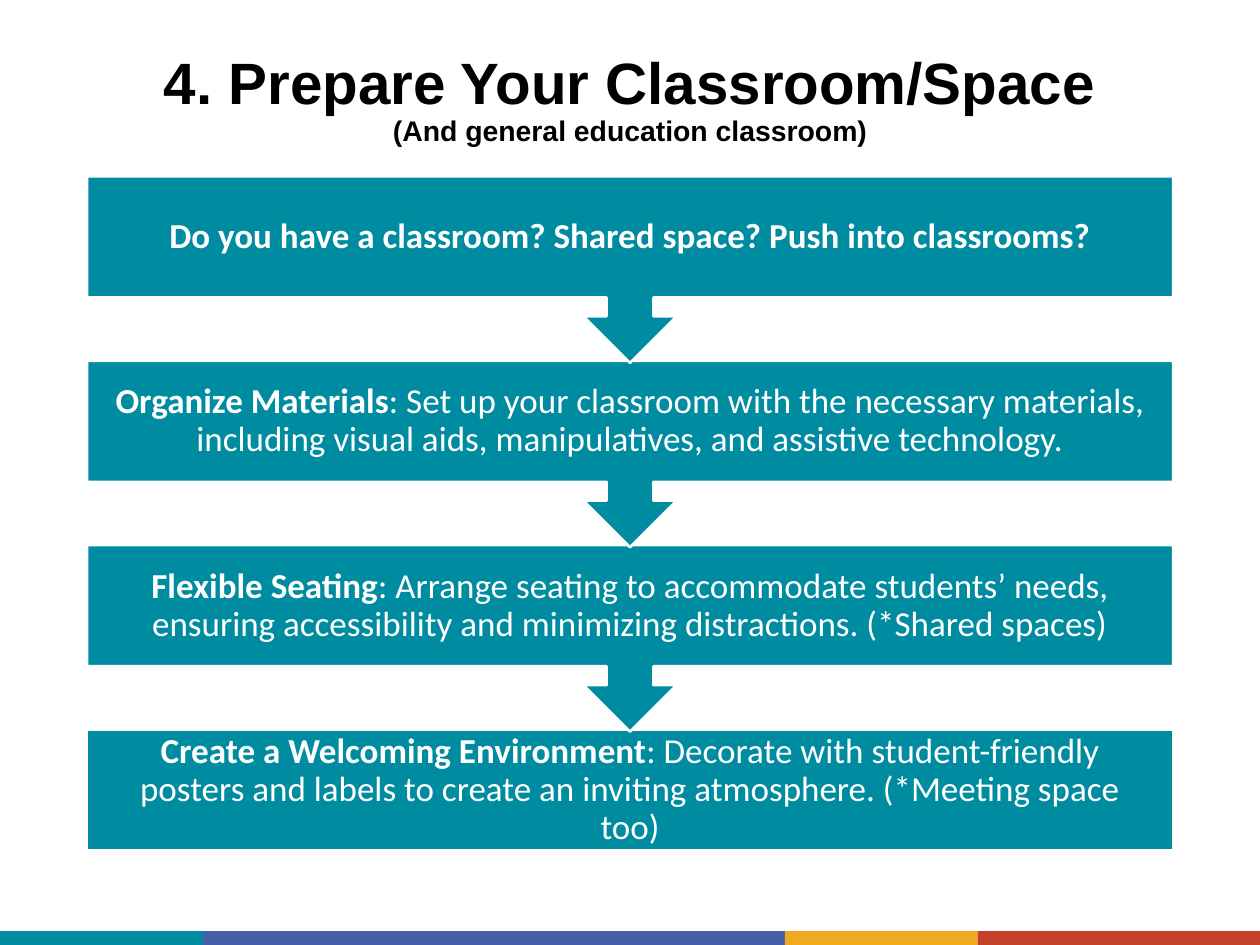
from dataclasses import dataclass

from pptx import Presentation
from pptx.dml.color import RGBColor
from pptx.enum.shapes import MSO_SHAPE as Shape
from pptx.enum.text import MSO_ANCHOR as Anchor, PP_ALIGN as Align
from pptx.util import Inches, Pt


@dataclass(frozen=True)
class Theme:
    """Colours, fonts and type sizes of the slide."""
    teal: RGBColor = RGBColor.from_string("008CA0")
    blue: RGBColor = RGBColor.from_string("455FA9")
    amber: RGBColor = RGBColor.from_string("EFAA1F")
    red: RGBColor = RGBColor.from_string("C63F28")
    white: RGBColor = RGBColor.from_string("FFFFFF")
    black: RGBColor = RGBColor.from_string("000000")
    title_font: str = "Arial"
    body_font: str = "Calibri"
    title_size: Pt = Pt(33.3)
    subtitle_size: Pt = Pt(16.2)
    body_size: Pt = Pt(20)
    outline: Pt = Pt(1.5)


THEME = Theme()

STEPS = [
    ("Do you have a classroom? Shared space? Push into classrooms?", ""),
    ("Organize Materials", ": Set up your classroom with the necessary materials, "
     "including visual aids, manipulatives, and assistive technology."),
    ("Flexible Seating", ": Arrange seating to accommodate students’ needs, ensuring "
     "accessibility and minimizing distractions. (*Shared spaces)"),
    ("Create a Welcoming Environment", ": Decorate with student-friendly posters and "
     "labels to create an inviting atmosphere. (*Meeting space too)"),
]


def add_block(slide, kind, left, top, width, height, color):
    """Add a flat filled shape without outline or shadow."""
    block = slide.shapes.add_shape(kind, left, top, width, height)
    block.shadow.inherit = False
    block.fill.solid()
    block.fill.fore_color.rgb = color
    block.line.fill.background()
    return block


def centre_text(frame, font_name, color):
    """Centre the frame's text and return its first paragraph."""
    frame.word_wrap = True
    frame.vertical_anchor = Anchor.MIDDLE
    paragraph = frame.paragraphs[0]
    paragraph.alignment = Align.CENTER
    paragraph.line_spacing = 0.9
    paragraph.font.name = font_name
    paragraph.font.color.rgb = color
    return paragraph


def add_footer_band(slide, left, top, height):
    """Draw the row of coloured segments at the foot of the slide."""
    segments = [(1.61, THEME.teal), (4.62, THEME.blue),
                (1.53, THEME.amber), (2.24, THEME.red)]
    for length, color in segments:
        width = Inches(length)
        add_block(slide, Shape.RECTANGLE, left, top, width, height, color)
        left += width


def add_title(slide, left, top, width, height):
    """Write the title with its smaller second line."""
    frame = slide.shapes.add_textbox(left, top, width, height).text_frame
    heading = centre_text(frame, THEME.title_font, THEME.black)
    heading.font.bold = True
    title = heading.add_run()
    title.text = "4. Prepare Your Classroom/Space"
    title.font.size = THEME.title_size
    heading.add_line_break()
    subtitle = heading.add_run()
    subtitle.text = "(And general education classroom)"
    subtitle.font.size = THEME.subtitle_size


def add_step(slide, kind, left, top, width, height, lead, detail):
    """Draw one step with a bold lead and a plain detail."""
    step = add_block(slide, kind, left, top, width, height, THEME.teal)
    step.line.color.rgb = THEME.white
    step.line.width = THEME.outline
    frame = step.text_frame
    frame.margin_left = frame.margin_right = Inches(0.16)
    frame.margin_top = frame.margin_bottom = Inches(0.16)
    paragraph = centre_text(frame, THEME.body_font, THEME.white)
    paragraph.font.size = THEME.body_size
    for text, bold in ((lead, True), (detail, False)):
        if text:
            run = paragraph.add_run()
            run.text = text
            run.font.bold = bold


def add_process(slide, left, top, width, height):
    """Stack the steps from the bottom up, so each arrow overlaps the next step."""
    last = len(STEPS) - 1
    box_height = Inches(0.96)
    pitch = (height - box_height) // last
    for index in range(last, -1, -1):
        kind, step_height = ((Shape.RECTANGLE, box_height) if index == last
                             else (Shape.DOWN_ARROW_CALLOUT, Inches(1.48)))
        add_step(slide, kind, left, top + index * pitch, width, step_height,
                 *STEPS[index])


def main():
    """Build and save the slide."""
    deck = Presentation()
    deck.slide_width, deck.slide_height = Inches(10), Inches(7.5)
    slide = deck.slides.add_slide(deck.slide_layouts[6])
    margin, content_width = Inches(0.69), Inches(8.62)
    add_footer_band(slide, 0, Inches(7.39), Inches(0.11))
    add_title(slide, margin, Inches(0.4), content_width, Inches(0.8))
    add_process(slide, margin, Inches(1.4), content_width, Inches(5.35))
    deck.save("out.pptx")


if __name__ == "__main__":
    main()
